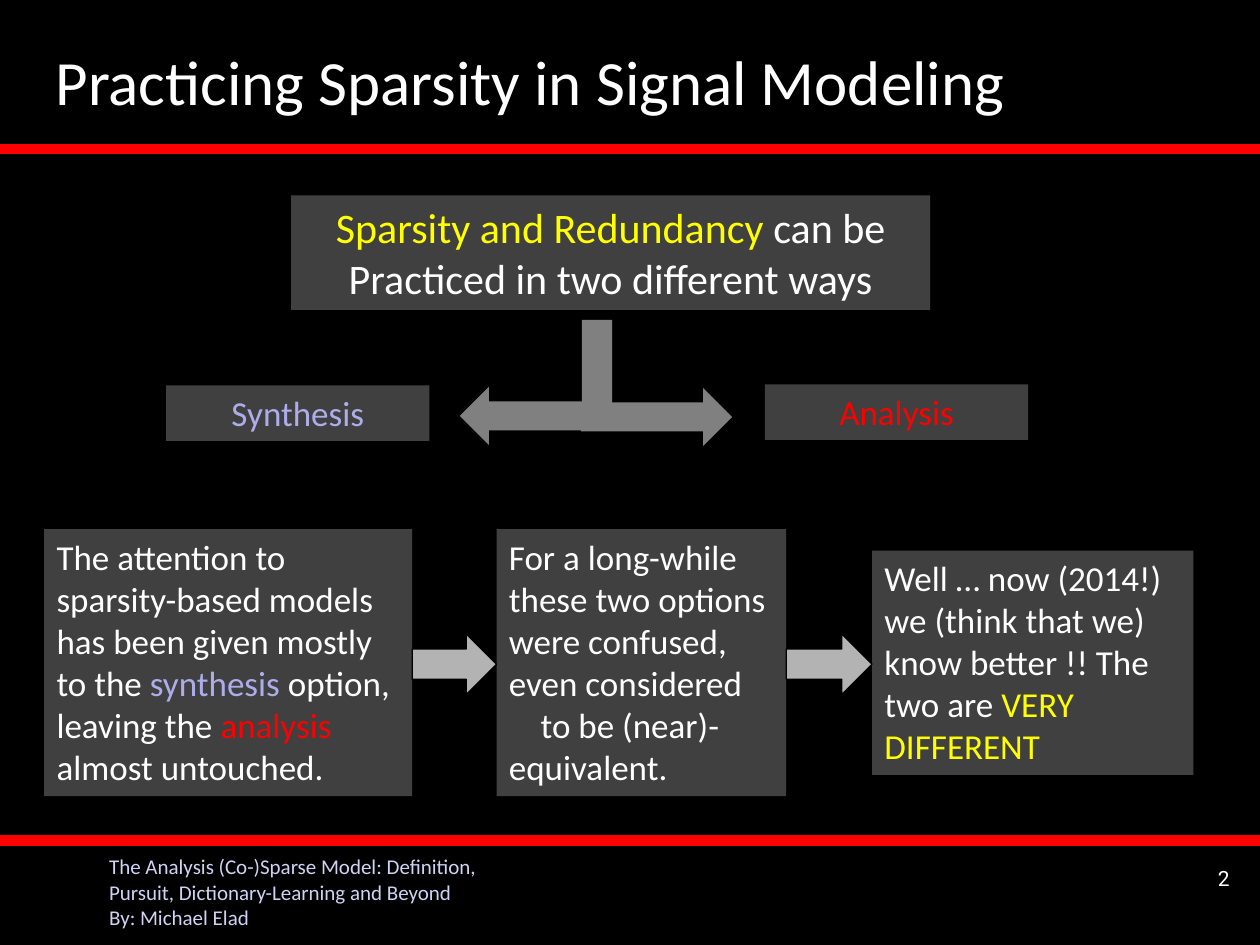
from itertools import pairwise

from lxml import etree
from pptx import Presentation
from pptx import util as u
from pptx.dml.color import RGBColor
from pptx.enum import shapes, text
from pptx.oxml.ns import qn

THEME = {
    "font": "Calibri", "number_font": "Roboto",
    "background": "000000", "white": "FFFFFF", "rule": "FF0000", "panel": "404040",
    "fork": "808080", "arrow": "B3B3B3", "footer": "D2D2F4",
    "synthesis": "ADADEB", "analysis": "FF0000", "highlight": "FFFF00",
    "title_size": 36, "claim_size": 24, "body_size": 20, "small_size": 12,
}

WIDTH, HEIGHT = 25.4, 19.05
TITLE = "Practicing Sparsity in Signal Modeling"
FOOTER = [
    "The Analysis (Co-)Sparse Model: Definition,",
    "Pursuit, Dictionary-Learning and Beyond",
    "By: Michael Elad",
]
SLIDE_NUMBER = "2"
RULES = [3.0, 16.94]

CLAIM = ((5.87, 3.94, 12.88, 2.31), [[
    ("Sparsity and Redundancy ", "highlight"),
    ("can be Practiced in two different ways", "white")]])
OPTIONS = [
    ((3.35, 7.77, 5.31, 1.12), [[("Synthesis", "synthesis")]]),
    ((15.42, 7.75, 5.31, 1.12), [[("Analysis", "analysis")]]),
]
STORY = [
    ((0.89, 10.67, 7.42, 5.38), [[
        ("The attention to sparsity-based models has been given mostly to the ", "white"),
        ("synthesis ", "synthesis"),
        ("option, leaving the ", "white"),
        ("analysis", "analysis"),
        (" almost untouched.", "white")]]),
    ((10.01, 10.67, 5.84, 5.38), [
        [("For a long-while these two options were confused, even considered", "white")],
        [("to be (near)-equivalent.", "white")]]),
    ((17.58, 11.1, 6.48, 4.52), [[
        ("Well … now (2014!) we (think that we) know better !! The two are ", "white"),
        ("VERY DIFFERENT", "highlight")]]),
]
FORK = [
    (shapes.MSO_SHAPE.RECTANGLE, (11.73, 6.45, 0.61, 2.24)),
    (shapes.MSO_SHAPE.RIGHT_ARROW, (11.71, 7.82, 3.05, 1.17)),
    (shapes.MSO_SHAPE.LEFT_ARROW, (9.27, 7.8, 3.05, 1.17)),
]
STEP_TOP, STEP_HEIGHT = 12.78, 1.22


def color(name):
    return RGBColor.from_string(THEME[name])


def place(box):
    return [u.Cm(length) for length in box]


def style(paragraph, size, color_name=None, font="font"):
    paragraph.font.name = THEME[font]
    paragraph.font.size = u.Pt(THEME[size])
    if color_name:
        paragraph.font.color.rgb = color(color_name)


def add_block(slide, kind, box, fill):
    shape = slide.shapes.add_shape(kind, *place(box))
    shape.shadow.inherit = False
    shape.fill.solid()
    shape.fill.fore_color.rgb = color(fill)
    shape.line.fill.background()
    return shape


def add_panel(slide, box, paragraphs, size, align):
    frame = add_block(slide, shapes.MSO_SHAPE.RECTANGLE, box, "panel").text_frame
    frame.word_wrap = True
    frame.vertical_anchor = text.MSO_ANCHOR.TOP
    frame.auto_size = text.MSO_AUTO_SIZE.SHAPE_TO_FIT_TEXT
    for index, runs in enumerate(paragraphs):
        paragraph = frame.add_paragraph() if index else frame.paragraphs[0]
        paragraph.alignment = align
        if index:
            paragraph._p.get_or_add_pPr().set("indent", str(u.Cm(0.64)))
        style(paragraph, size)
        for words, color_name in runs:
            run = paragraph.add_run()
            run.text = words
            run.font.color.rgb = color(color_name)


def add_label(slide, box, lines, color_name, align, font="font"):
    frame = slide.shapes.add_textbox(*place(box)).text_frame
    frame.word_wrap = True
    frame.text = "\n".join(lines)
    for paragraph in frame.paragraphs:
        paragraph.alignment = align
        style(paragraph, "small_size", color_name, font)


def add_rule(slide, top):
    line = slide.shapes.add_connector(
        shapes.MSO_CONNECTOR.STRAIGHT, *place((0, top, WIDTH, top)))
    line.line.color.rgb = color("rule")
    line.line.width = u.Pt(6)
    etree.SubElement(line._element.spPr, qn("a:effectLst"))


def add_title(slide):
    title = slide.shapes.title
    title.left, title.top, title.width, title.height = place((0, 0.43, 25.07, 2.36))
    frame = title.text_frame
    frame.text = TITLE
    frame.margin_left = u.Cm(1.12)
    frame.vertical_anchor = text.MSO_ANCHOR.MIDDLE
    frame.paragraphs[0].alignment = text.PP_ALIGN.LEFT
    style(frame.paragraphs[0], "title_size", "white")


def main():
    presentation = Presentation()
    presentation.slide_width, presentation.slide_height = place((WIDTH, HEIGHT))
    slide = presentation.slides.add_slide(presentation.slide_layouts[5])
    slide.background.fill.solid()
    slide.background.fill.fore_color.rgb = color("background")

    add_title(slide)
    for top in RULES:
        add_rule(slide, top)
    add_label(slide, (1.95, 17.09, 9.91, 1.9), FOOTER, "footer", text.PP_ALIGN.LEFT)
    add_label(slide, (19.76, 17.32, 5.28, 1.27), [SLIDE_NUMBER], "white",
              text.PP_ALIGN.RIGHT, "number_font")

    add_panel(slide, *CLAIM, "claim_size", text.PP_ALIGN.CENTER)
    for option in OPTIONS:
        add_panel(slide, *option, "body_size", text.PP_ALIGN.CENTER)
    for kind, box in FORK:
        add_block(slide, kind, box, "fork")

    for step in STORY:
        add_panel(slide, *step, "body_size", text.PP_ALIGN.LEFT)
    for (before, _), (after, _) in pairwise(STORY):
        start = before[0] + before[2]
        arrow = add_block(slide, shapes.MSO_SHAPE.RIGHT_ARROW,
                          (start, STEP_TOP, after[0] - start, STEP_HEIGHT), "arrow")
        arrow.line.color.rgb = color("background")
        arrow.line.width = u.Pt(0.75)

    presentation.save("out.pptx")


if __name__ == "__main__":
    main()
